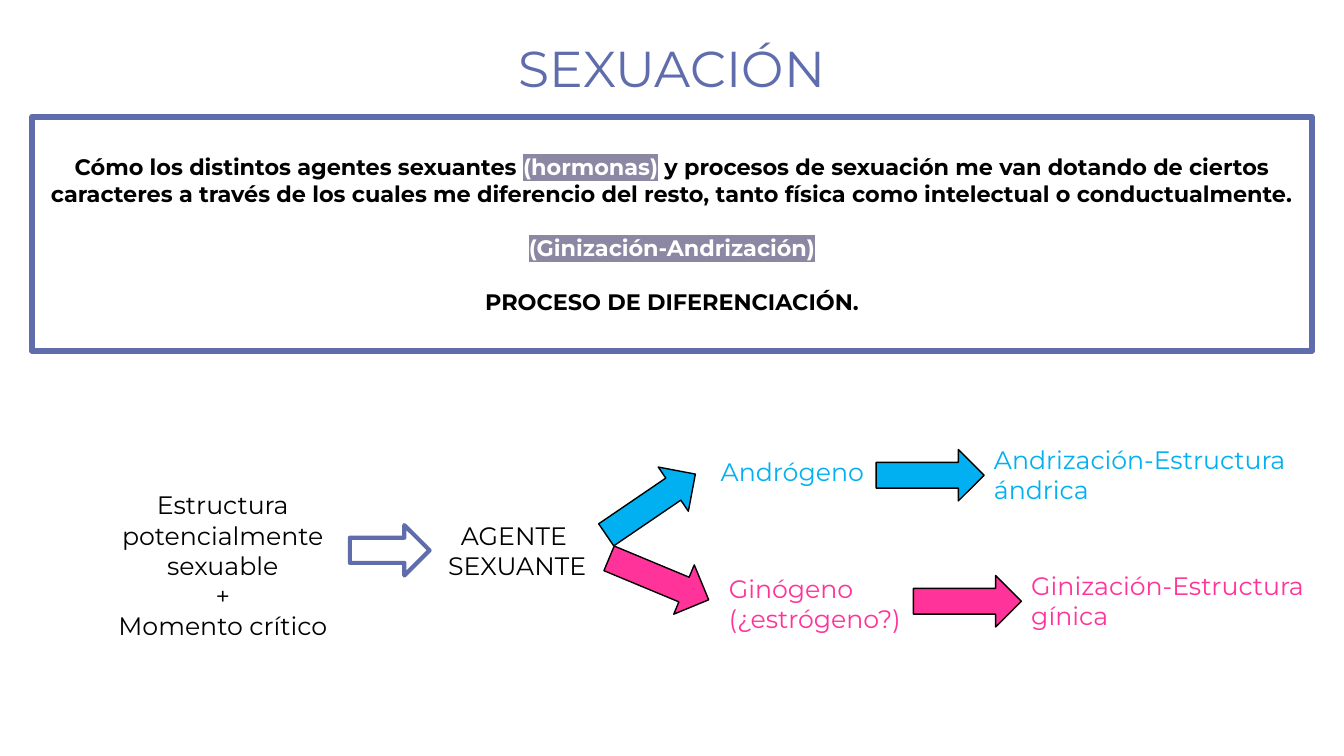
from lxml import etree
from pptx import Presentation
from pptx import util as u
from pptx.dml.color import RGBColor
from pptx.enum import shapes, text
from pptx.oxml.ns import qn

INDIGO = RGBColor(0x5F, 0x6D, 0xAC)
MAUVE = RGBColor(0x8C, 0x88, 0xA3)
BLUE = RGBColor(0x00, 0xB0, 0xF0)
PINK = RGBColor(0xFF, 0x33, 0x99)
BLACK = RGBColor(0, 0, 0)
WHITE = RGBColor(0xFF, 0xFF, 0xFF)
LEFT, CENTER = text.PP_ALIGN.LEFT, text.PP_ALIGN.CENTER
ARROW_WIDTH = 1.07


def inches(*lengths):
    return [u.Inches(length) for length in lengths]


def add_span(para, words, color, size, bold=False, highlight=None):
    span = para.add_run()
    span.text = words
    formats = {"name": "Montserrat", "size": u.Pt(size), "bold": bold}
    for name, value in formats.items():
        setattr(span.font, name, value)
    span.font.color.rgb = color
    if highlight is not None:
        mark = etree.Element(qn("a:highlight"))
        etree.SubElement(mark, qn("a:srgbClr")).set("val", str(highlight))
        span._r.get_or_add_rPr().find(qn("a:solidFill")).addnext(mark)


def add_label(page, box, lines, color=BLACK, size=18, align=LEFT):
    frame = page.shapes.add_textbox(*inches(*box)).text_frame
    frame.word_wrap = True
    for index, words in enumerate(lines):
        para = frame.add_paragraph() if index else frame.paragraphs[0]
        para.alignment = align
        add_span(para, words, color, size)


def add_outlined(page, kind, box, line_color, weight, fill=None):
    shape = page.shapes.add_shape(kind, *inches(*box))
    shape.shadow.inherit = False
    if fill is None:
        shape.fill.background()
    else:
        shape.fill.solid()
        shape.fill.fore_color.rgb = fill
    shape.line.color.rgb = line_color
    shape.line.width = u.Pt(weight)
    return shape


def add_arrow(page, box, fill, line_color=BLACK, weight=1, rotation=0):
    kind = shapes.MSO_SHAPE.RIGHT_ARROW
    arrow = add_outlined(page, kind, box, line_color, weight, fill)
    arrow.rotation = rotation


def add_definition(page, box):
    frame = add_outlined(page, shapes.MSO_SHAPE.RECTANGLE, box, INDIGO, 4.5).text_frame
    frame.word_wrap = True
    frame.vertical_anchor = text.MSO_ANCHOR.MIDDLE
    statements = [
        [("Cómo los distintos agentes sexuantes ", False),
         ("(hormonas)", True),
         (" y procesos de sexuación me van dotando de ciertos caracteres a través "
          "de los cuales me diferencio del resto, tanto física como intelectual o "
          "conductualmente.", False)],
        [("(Ginización-Andrización)", True)],
        [("PROCESO DE DIFERENCIACIÓN.", False)],
    ]
    for index, statement in enumerate(statements):
        para = frame.add_paragraph() if index else frame.paragraphs[0]
        para.alignment = CENTER
        if index:
            para.space_before = u.Pt(19.5)
        for words, marked in statement:
            add_span(para, words, WHITE if marked else BLACK, 16, True,
                     MAUVE if marked else None)


def add_origin(page, left, top):
    add_label(page, (left, top, 3.06, 1.62),
              ["Estructura potencialmente sexuable", "+", "Momento crítico"],
              align=CENTER)
    add_arrow(page, (left + 2.79, top + 0.4, 0.79, 0.5), WHITE, INDIGO, 3)
    add_label(page, (left + 2.92, top + 0.3, 3.06, 0.71),
              ["AGENTE ", "SEXUANTE"], align=CENTER)


def add_branch(page, color, fork, rotation, agent_box, agent, arrow_at, outcome):
    add_arrow(page, (*fork, ARROW_WIDTH, 0.53), color, rotation=rotation)
    add_label(page, agent_box, agent, color)
    left, top = arrow_at
    add_arrow(page, (left, top, ARROW_WIDTH, 0.51), color)
    add_label(page, (left + ARROW_WIDTH, top - 0.1, 3.1, 0.71), [outcome], color)


def main():
    deck = Presentation()
    deck.slide_width, deck.slide_height = inches(13.33, 7.5)
    page = deck.slides.add_slide(deck.slide_layouts[6])
    add_label(page, (0, 0.32, 13.33, 0.71), ["SEXUACIÓN"], INDIGO, 36, CENTER)
    add_definition(page, (0.32, 1.16, 12.69, 2.32))
    add_origin(page, 0.68, 4.81)
    add_branch(page, BLUE, (5.92, 4.74), 325.7, (7.05, 4.48, 1.74, 0.4),
               ["Andrógeno"], (8.69, 4.46), "Andrización-Estructura ándrica")
    add_branch(page, PINK, (6, 5.48), 22.6, (7.13, 5.64, 2.09, 0.71),
               ["Ginógeno", "(¿estrógeno?)"], (9.06, 5.71),
               "Ginización-Estructura gínica")
    deck.save("out.pptx")


if __name__ == "__main__":
    main()
